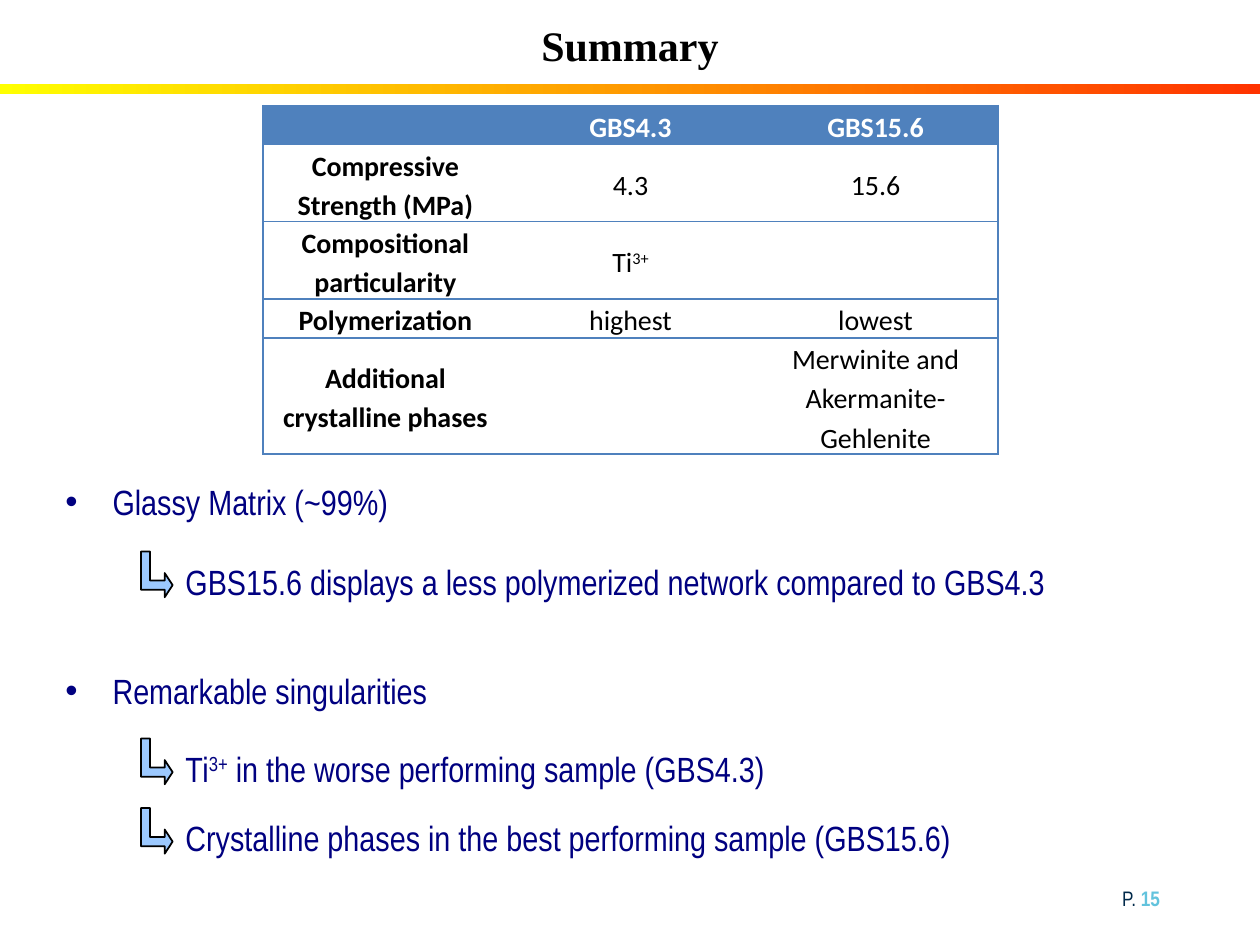
from lxml.etree import SubElement
from pptx import Presentation
from pptx.dml.color import RGBColor
from pptx.enum.shapes import MSO_SHAPE
from pptx.enum.text import MSO_ANCHOR, PP_ALIGN
from pptx.oxml.ns import qn
from pptx.util import Cm, Pt

COLORS = {
    "yellow": "FFFF00", "red": "FF3300", "black": "000000", "white": "FFFFFF",
    "navy": "000080", "arrow": "9CC9FF", "table": "4F81BD",
    "page": "00294A", "number": "62C3DD",
}
TITLE = {"name": "Times New Roman", "size": Pt(24), "bold": True, "color": "black"}
BODY = {"name": "Arial Narrow", "size": Pt(20), "color": "navy"}
PAGE = {"name": "Arial Narrow", "size": Pt(12), "color": "page"}
CELL = {"name": "Calibri", "size": Pt(16), "color": "black"}

ROWS = [
    ("", "GBS4.3", "GBS15.6"),
    ("Compressive Strength (MPa)", "4.3", "15.6"),
    ("Compositional particularity", "Ti^3+^", ""),
    ("Polymerization", "highest", "lowest"),
    ("Additional crystalline phases", "", "Merwinite and Akermanite-Gehlenite"),
]
ROW_LINES = (1, 2, 2, 1, 3)
TOPICS = [
    (0, "Glassy Matrix (~99%)",
     [(2.06, "GBS15.6 displays a less polymerized network compared to GBS4.3")]),
    (3.82, "Remarkable singularities",
     [(2.01, "Ti^3+^ in the worse performing sample (GBS4.3)"),
      (3.41, "Crystalline phases in the best performing sample (GBS15.6)")]),
]


def rgb(name):
    """Return the named colour."""
    return RGBColor.from_string(COLORS[name])


def add_runs(p, text, fmt):
    """Add runs to a paragraph, raising the parts between carets."""
    for i, part in enumerate(text.split("^")):
        if not part:
            continue
        r = p.add_run()
        r.text = part
        for key, value in fmt.items():
            if key == "color":
                r.font.color.rgb = rgb(value)
            else:
                setattr(r.font, key, value)
        if i % 2:
            r.font._element.set("baseline", "30000")


def add_text(s, x, y, w, h, text, fmt, align=PP_ALIGN.LEFT, inset=0.25):
    """Add a middle-anchored text box and return its paragraph."""
    tf = s.shapes.add_textbox(Cm(x), Cm(y), Cm(w), Cm(h)).text_frame
    frame = {"word_wrap": True, "vertical_anchor": MSO_ANCHOR.MIDDLE,
             "margin_left": Cm(inset), "margin_right": Cm(inset),
             "margin_top": 0, "margin_bottom": 0}
    for key, value in frame.items():
        setattr(tf, key, value)
    p = tf.paragraphs[0]
    p.alignment = align
    add_runs(p, text, fmt)
    return p


def add_header(s, x, y, w):
    """Place the title above the full-width gradient band."""
    add_text(s, x + 0.2, y + 0.2, w - 0.4, 1.42, "Summary", TITLE, PP_ALIGN.CENTER)
    sp = s.shapes.add_shape(MSO_SHAPE.RECTANGLE, Cm(x), Cm(y + 1.7), Cm(w), Cm(0.2))
    sp.shadow.inherit = False
    sp.line.fill.background()
    sp.fill.gradient()
    sp.fill.gradient_angle = 0
    for stop, name in zip(sp.fill.gradient_stops, ("yellow", "red")):
        stop.color.rgb = rgb(name)


def set_borders(cell, sides):
    """Draw the listed cell sides and hide the others."""
    tc_pr = cell._tc.get_or_add_tcPr()
    for side in "LRTB":
        ln = SubElement(tc_pr, qn(f"a:ln{side}"), w=str(Pt(1)))
        if side in sides:
            fill = SubElement(ln, qn("a:solidFill"))
            SubElement(fill, qn("a:srgbClr"), val=COLORS["table"])
        else:
            SubElement(ln, qn("a:noFill"))


def add_results(s, x, y, w, line_height):
    """Place the comparison table, with row heights by line count."""
    height = line_height * sum(ROW_LINES)
    table = s.shapes.add_table(len(ROWS), 3, Cm(x), Cm(y), Cm(w), Cm(height)).table
    for col in table.columns:
        col.width = Cm(w / 3)
    for i, (values, lines) in enumerate(zip(ROWS, ROW_LINES)):
        table.rows[i].height = Cm(line_height * lines)
        for j, text in enumerate(values):
            cell = table.cell(i, j)
            layout = {"vertical_anchor": MSO_ANCHOR.MIDDLE,
                      "margin_left": Cm(0.18), "margin_right": Cm(0.18),
                      "margin_top": 0, "margin_bottom": 0}
            for key, value in layout.items():
                setattr(cell, key, value)
            set_borders(cell, ("LTB", "TB", "RTB")[j])
            cell.fill.solid()
            cell.fill.fore_color.rgb = rgb("white" if i else "table")
            if text:
                p = cell.text_frame.paragraphs[0]
                p.alignment = PP_ALIGN.CENTER
                p.line_spacing = 1.15
                add_runs(p, text, {**CELL, "bold": i == 0 or j == 0,
                                   "color": "black" if i else "white"})


def add_arrow(s, x, y):
    """Place one arrow that turns down and then right."""
    sp = s.shapes.add_shape(MSO_SHAPE.BENT_UP_ARROW, Cm(x), Cm(y), Cm(0.92), Cm(0.64))
    sp.rotation = 90
    sp.shadow.inherit = False
    for i, value in enumerate((0.29, 0.38, 0.25)):
        sp.adjustments[i] = value
    sp.fill.solid()
    sp.fill.fore_color.rgb = rgb("arrow")
    sp.line.color.rgb = rgb("black")
    sp.line.width = Pt(1)


def add_topic(s, x, y, w, heading, points):
    """Place a bulleted heading and its arrow-marked points."""
    p = add_text(s, x, y, w, 1.2, heading, BODY)
    p_pr = p._p.get_or_add_pPr()
    p_pr.set("marL", str(Cm(0.95)))
    p_pr.set("indent", str(-Cm(0.95)))
    SubElement(p_pr, qn("a:buFont"), typeface="Arial")
    SubElement(p_pr, qn("a:buChar"), char="•")
    for dy, text in points:
        add_arrow(s, x + 1.63, y + dy - 0.3)
        add_text(s, x + 2.42, y + dy - 0.44, w - 2.42, 1.2, text, BODY)


def add_page_number(s, x, y, w):
    """Place the page label."""
    p = add_text(s, x, y, w, 0.5, "P. ", PAGE, inset=0)
    add_runs(p, "15", {**PAGE, "bold": True, "color": "number"})


def main():
    """Build and save the summary slide."""
    prs = Presentation()
    prs.slide_width, prs.slide_height = Cm(25.4), Cm(19.05)
    s = prs.slides.add_slide(prs.slide_layouts[6])
    add_header(s, 0, 0, 25.4)
    add_results(s, 5.3, 2.13, 14.82, 0.78)
    for dy, heading, points in TOPICS:
        add_topic(s, 1.07, 9.5 + dy, 22.3, heading, points)
    add_page_number(s, 22.62, 17.86, 1.8)
    prs.save("out.pptx")


if __name__ == "__main__":
    main()
